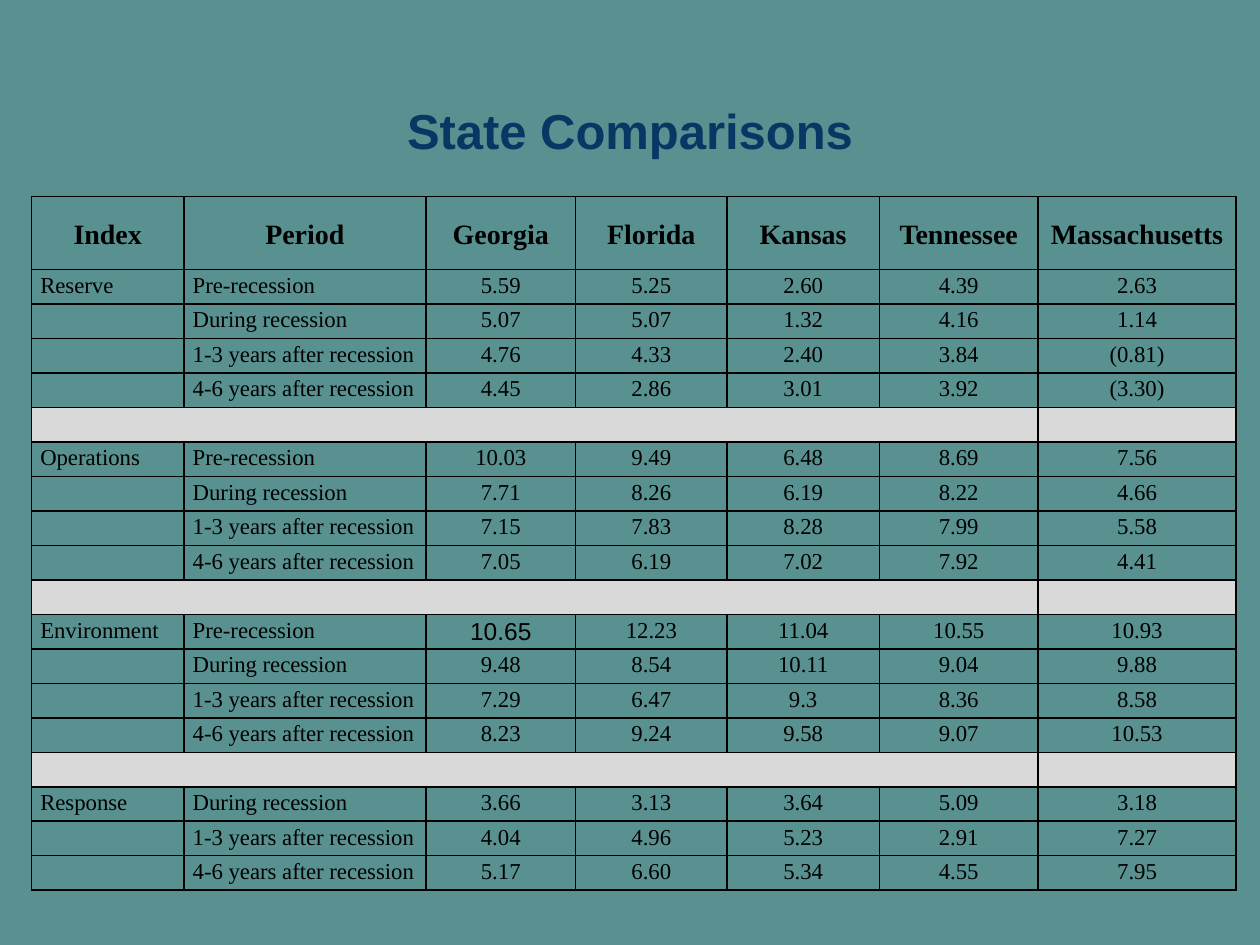
"""Build a slide with a table of recession indexes for five states."""
from lxml import etree
from pptx import Presentation
from pptx import util as u
from pptx.dml.color import RGBColor
from pptx.enum import text
from pptx.oxml import ns

HUES = {"back": "599191", "title": "073763", "ink": "000000", "band": "D9D9D9"}
HEADS = ["Index", "Period", "Georgia", "Florida", "Kansas", "Tennessee", "Massachusetts"]
SPANS = ["Pre-recession", "During recession", "1-3 years after recession",
         "4-6 years after recession"]
WIDTHS = [1.21, 1.92, 1.19, 1.2, 1.21, 1.26, 1.57]
DATA = {
    "Reserve": ["5.59 5.25 2.60 4.39 2.63", "5.07 5.07 1.32 4.16 1.14",
                "4.76 4.33 2.40 3.84 (0.81)", "4.45 2.86 3.01 3.92 (3.30)"],
    "Operations": ["10.03 9.49 6.48 8.69 7.56", "7.71 8.26 6.19 8.22 4.66",
                   "7.15 7.83 8.28 7.99 5.58", "7.05 6.19 7.02 7.92 4.41"],
    "Environment": ["10.65 12.23 11.04 10.55 10.93", "9.48 8.54 10.11 9.04 9.88",
                    "7.29 6.47 9.3 8.36 8.58", "8.23 9.24 9.58 9.07 10.53"],
    "Response": ["3.66 3.13 3.64 5.09 3.18", "4.04 4.96 5.23 2.91 7.27",
                 "5.17 6.60 5.34 4.55 7.95"],
}


def style(par, face, size, hue, bold, align):
    """Set the font and alignment of a paragraph."""
    par.font.name, par.font.size, par.font.bold = face, u.Pt(size), bold
    par.font.color.rgb = RGBColor.from_string(HUES[hue])
    par.alignment = align


def frame(cell):
    """Draw a thin line on each side of a cell."""
    props = cell._tc.get_or_add_tcPr()
    for side in ("lnL", "lnR", "lnT", "lnB"):
        line = etree.SubElement(props, ns.qn(f"a:{side}"), w=str(u.Pt(1)))
        fill = etree.SubElement(line, ns.qn("a:solidFill"))
        etree.SubElement(fill, ns.qn("a:srgbClr"), val=HUES["ink"])


deck = Presentation()
deck.slide_width, deck.slide_height = u.Inches(10), u.Inches(7.5)
slide = deck.slides.add_slide(deck.slide_layouts[5])
slide.background.fill.solid()
slide.background.fill.fore_color.rgb = RGBColor.from_string(HUES["back"])

title = slide.shapes.title
title.left, title.top = u.Inches(0.5), u.Inches(0.63)
title.width, title.height = u.Inches(9), u.Inches(0.81)
title.text_frame.text = "State Comparisons"
title.text_frame.vertical_anchor = text.MSO_ANCHOR.MIDDLE
style(title.text_frame.paragraphs[0], "Arial", 28, "title", True, text.PP_ALIGN.CENTER)

rows = [HEADS]
for index, lines in DATA.items():
    if len(rows) > 1:
        rows.append([""] * len(HEADS))
    for num, (span, line) in enumerate(zip(SPANS[-len(lines):], lines)):
        rows.append(["" if num else index, span, *line.split()])

table = slide.shapes.add_table(len(rows), len(HEADS), u.Inches(0.25), u.Inches(1.56),
                               u.Inches(9.55), u.Inches(5.51)).table
table.first_row = table.horz_banding = False
for col, width in zip(table.columns, WIDTHS):
    col.width = u.Inches(width)

for r, row in enumerate(rows):
    head, band = r == 0, not any(row)
    table.rows[r].height = u.Inches(0.58 if head else 4.93 / (len(rows) - 1))
    for c, word in enumerate(row):
        cell = table.cell(r, c)
        cell.margin_left = cell.margin_right = u.Inches(0.07)
        cell.margin_top = cell.margin_bottom = 0
        cell.vertical_anchor = text.MSO_ANCHOR.MIDDLE if head else text.MSO_ANCHOR.TOP
        frame(cell)
        if band:
            cell.fill.solid()
            cell.fill.fore_color.rgb = RGBColor.from_string(HUES["band"])
        else:
            cell.fill.background()
        cell.text = word
        par = cell.text_frame.paragraphs[0]
        par.line_spacing = 1.15
        odd = word == "10.65"
        size = 16 if head else 14 if odd else 13
        side = text.PP_ALIGN.CENTER if head or c > 1 else text.PP_ALIGN.LEFT
        style(par, "Arial" if odd else "Times New Roman", size, "ink", head, side)
        if not word:
            par._p.get_or_add_endParaRPr().set("sz", str(size * 100))
    if band:
        table.cell(r, 0).merge(table.cell(r, 5))

deck.save("out.pptx")
